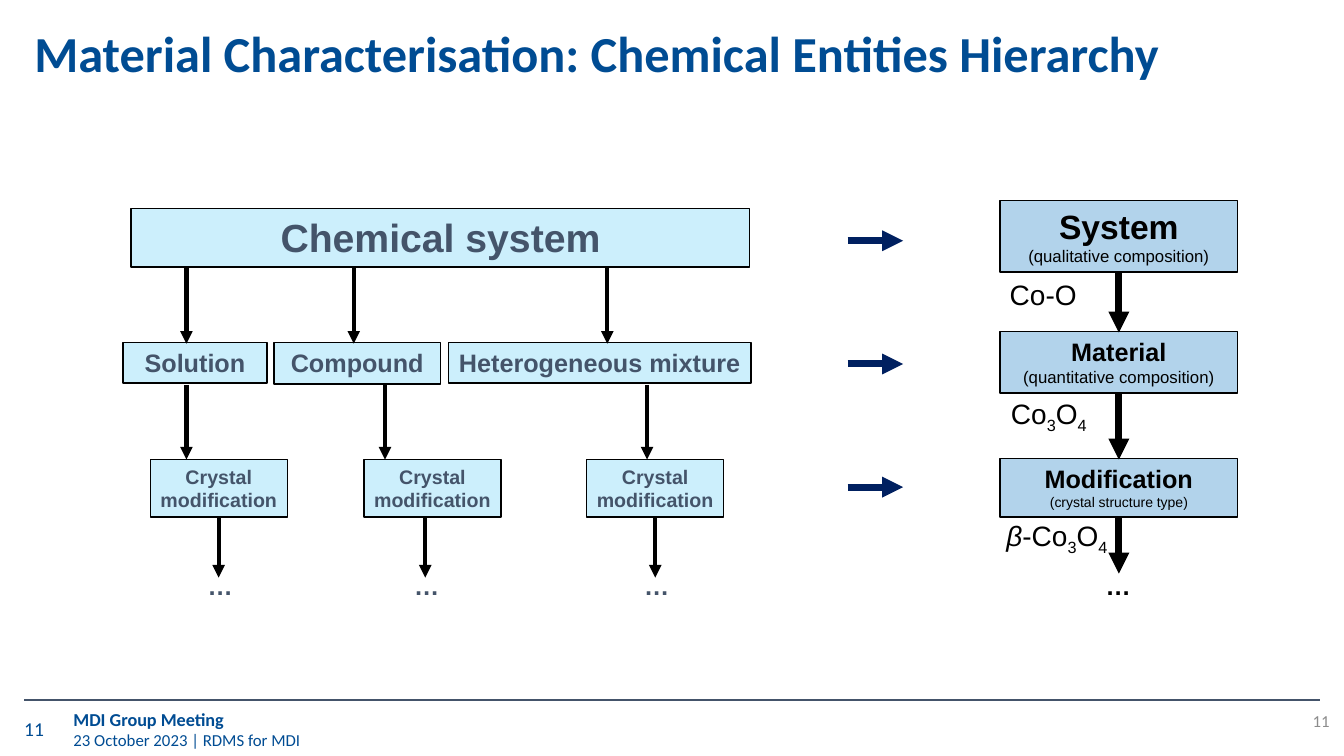
from lxml.etree import SubElement
from pptx import Presentation
from pptx.dml.color import RGBColor
from pptx.enum.shapes import MSO_CONNECTOR, MSO_SHAPE
from pptx.enum.text import MSO_ANCHOR, PP_ALIGN
from pptx.oxml.ns import qn
from pptx.util import Pt

BRAND, SLATE, BLACK, NAVY = "004C93", "44546A", "000000", "002060"
CYAN, BLUE = ("00B0F0", 20), ("0070C0", 30)  # fill colour, opacity in percent


def color(hex_code):
    return RGBColor.from_string(hex_code)


class HierarchySlide:
    base_style = {"name": "Arial", "size": 18, "bold": False, "italic": False, "color": BLACK}

    def __init__(self, presentation):
        self.slide = presentation.slides.add_slide(presentation.slide_layouts[5])
        self.shapes = self.slide.shapes

    def fill_text(self, shape, lines, align=PP_ALIGN.LEFT, anchor=MSO_ANCHOR.TOP,
                  wrap=True, insets=(7.2, 3.6), **style):
        """Each line is a list of (text, style changes) runs."""
        frame = shape.text_frame
        frame.word_wrap, frame.vertical_anchor = wrap, anchor
        frame.margin_left, frame.margin_right = Pt(insets[0]), Pt(7.2)
        frame.margin_top = frame.margin_bottom = Pt(insets[1])
        for index, runs in enumerate(lines):
            paragraph = frame.paragraphs[0] if index == 0 else frame.add_paragraph()
            paragraph.alignment = align
            for text, changes in runs:
                run = paragraph.add_run()
                run.text = text
                self.format_run(run, {**self.base_style, **style, **changes})
        return frame

    def format_run(self, run, style):
        for key, value in style.items():
            if key == "color":
                run.font.color.rgb = color(value)
            elif key == "baseline":
                run.font._element.set("baseline", str(value * 1000))
            else:
                setattr(run.font, key, Pt(value) if key == "size" else value)

    def title(self, text, place):
        shape = self.shapes.title
        shape.left, shape.top, shape.width, shape.height = map(Pt, place)
        frame = self.fill_text(shape, [[(text, {})]], anchor=MSO_ANCHOR.MIDDLE,
                               insets=(7.2, 2.9), name="Calibri", size=36, bold=True,
                               color=BRAND)
        frame.paragraphs[0].line_spacing = 0.9

    def text(self, place, lines, **options):
        self.fill_text(self.shapes.add_textbox(*map(Pt, place)), lines, **options)

    def box(self, place, lines, fill, **options):
        shape = self.shapes.add_shape(MSO_SHAPE.RECTANGLE, *map(Pt, place))
        shape.shadow.inherit = False
        shape.fill.solid()
        shape.fill.fore_color.rgb = color(fill[0])
        fill_color = shape._element.spPr.find(qn("a:solidFill"))[0]
        SubElement(fill_color, qn("a:alpha")).set("val", str(fill[1] * 1000))
        shape.line.color.rgb = color(BLACK)
        shape.line.width = Pt(1)
        self.fill_text(shape, lines, align=PP_ALIGN.CENTER, **options)

    def line(self, start, end, hex_code, width, arrow=True):
        connector = self.shapes.add_connector(MSO_CONNECTOR.STRAIGHT, *map(Pt, start + end))
        connector.line.color.rgb = color(hex_code)
        connector.line.width = Pt(width)
        if arrow:
            outline = connector._element.spPr.find(qn("a:ln"))
            SubElement(outline, qn("a:tailEnd")).set("type", "triangle")
        SubElement(connector._element.spPr, qn("a:effectLst"))

    def ellipsis(self, center, hex_code):
        self.text((center - 15, 404, 32.4, 28.8), [[("…", {})]],
                  wrap=False, bold=True, color=hex_code)


def main():
    presentation = Presentation()
    presentation.slide_width, presentation.slide_height = Pt(960), Pt(540)
    page = HierarchySlide(presentation)

    # Title and footer
    page.title("Material Characterisation: Chemical Entities Hierarchy", (17.3, 8.6, 926.6, 62.6))
    footer = {"name": "Calibri", "color": BRAND, "anchor": MSO_ANCHOR.MIDDLE}
    page.line((17.3, 499.7), (943.2, 499.7), SLATE, 1.5, arrow=False)
    page.text((17.3, 503.3, 38.2, 33.8), [[("11", {})]], size=14, wrap=False,
              insets=(0, 3.6), **footer)
    page.text((45.4, 501.8, 393.1, 38.2),
              [[("MDI Group Meeting", {"size": 13, "bold": True})],
               [("23 October 2023 | RDMS for MDI", {"size": 12})]], **footer)
    page.text((743.8, 500.4, 213, 28.8), [[("11", {})]], size=12, align=PP_ALIGN.RIGHT,
              **{**footer, "color": "8C8C8C"})

    # Chemical system and its kinds
    heading = {"fill": CYAN, "bold": True, "color": SLATE}
    page.box((93.6, 149, 442, 41.8), [[("Chemical system", {})]], size=28, **heading)
    kinds = [("Solution", 87.8, 103, 28.8), ("Compound", 195.8, 118.8, 29.5),
             ("Heterogeneous mixture", 320.4, 216, 28.8)]
    for name, left, width, height in kinds:
        page.box((left, 244.8, width, height), [[(name, {})]], **heading)

    # Crystal modifications
    for left in (107.3, 259.9, 419):
        page.box((left, 328.3, 98, 41), [[("Crystal", {})], [("modification", {})]],
                 size=14, wrap=False, **heading)

    # Arrows between the levels on the left
    levels = [(190.8, 245.5, (133.2, 252.7, 433.8)),
              (275, 328.3, (133.2, 275, 462.2)),
              (370, 412.6, (156.2, 303.8, 468))]
    for top, bottom, centers in levels:
        for center in centers:
            page.line((center, top), (center, bottom), BLACK, 3)
    for center in levels[-1][2]:
        page.ellipsis(center, SLATE)

    # Arrows from left to right
    for level in range(3):
        height = 172 + 88 * level
        page.line((605.5, height), (645.1, height), NAVY, 5)

    # Entities on the right
    entities = [("System", 24, "(qualitative composition)", 12, 143.3, 51.1, 237.6),
                ("Material", 18, "(quantitative composition)", 12, 236.9, 43.9, 328.3),
                ("Modification", 18, "(crystal structure type)", 10, 327.6, 41.8, 409.7)]
    for name, size, detail, detail_size, top, height, arrow_end in entities:
        page.box((714.2, top, 170, height),
                 [[(name, {"size": size, "bold": True})], [(detail, {"size": detail_size})]], BLUE)
        page.line((799.2, top + height), (799.2, arrow_end), BLACK, 5)
    page.ellipsis(797.6, BLACK)

    # Example formulas
    subscript = {"baseline": -25}
    oxide = [("3", subscript), ("O", {}), ("4", subscript)]
    page.text((714.2, 194.4, 79.2, 31), [[("Co-O", {})]], size=20)
    formula = {"size": 20, "align": PP_ALIGN.CENTER, "anchor": MSO_ANCHOR.MIDDLE}
    page.text((708.5, 285.1, 81.4, 23), [[("Co", {})] + oxide], **formula)
    page.text((708.5, 370.1, 92.9, 28.1), [[("β", {"italic": True}), ("-Co", {})] + oxide],
              **formula)

    presentation.save("out.pptx")


if __name__ == "__main__":
    main()
